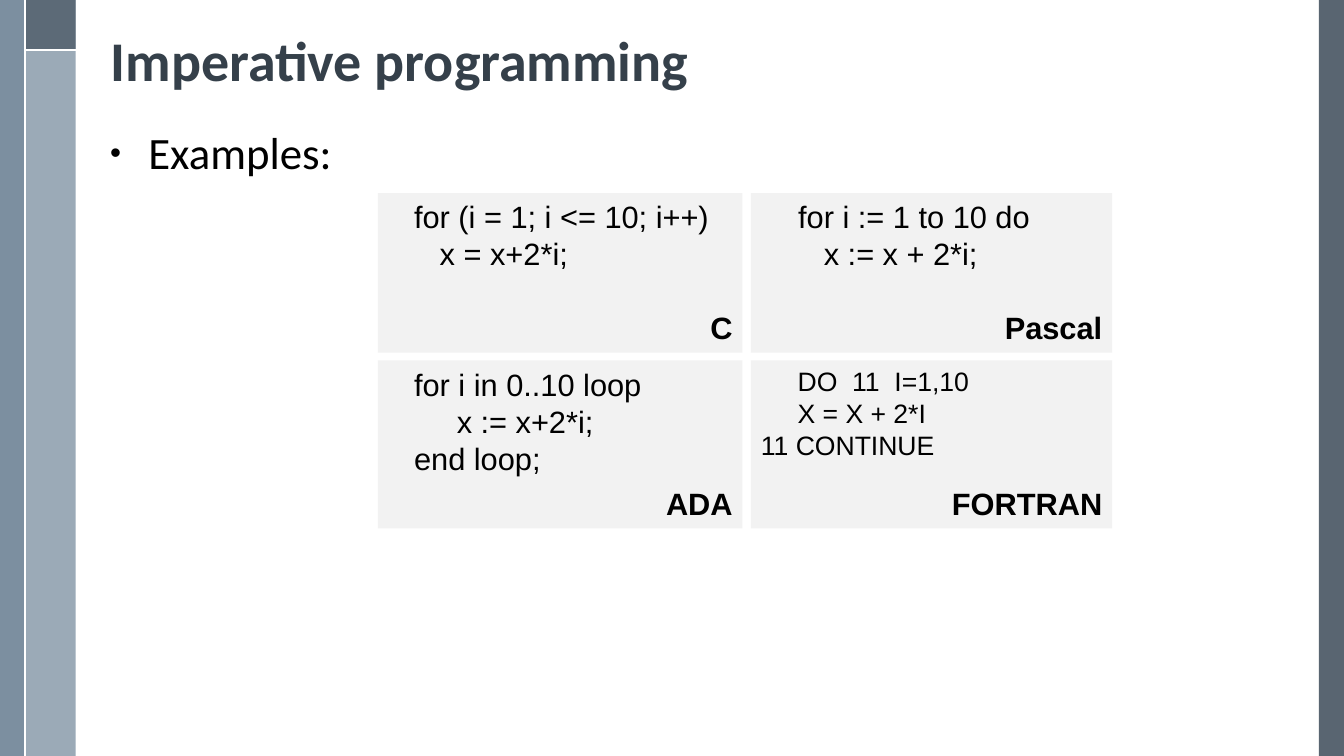
from dataclasses import dataclass

from pptx import Presentation
from pptx.dml.color import RGBColor
from pptx.enum.shapes import MSO_CONNECTOR, MSO_SHAPE
from pptx.enum.text import MSO_ANCHOR, MSO_AUTO_SIZE, PP_ALIGN
from pptx.oxml.ns import qn
from pptx.util import Inches, Pt
from lxml.etree import SubElement


@dataclass(frozen=True)
class Theme:
    slate: str = "475562"
    steel: str = "6A8093"
    mist: str = "9BAAB7"
    white: str = "FFFFFF"
    heading: str = "35404A"
    ink: str = "000000"
    panel: str = "F2F2F2"
    heading_font: str = "Calibri"
    code_font: str = "Arial"
    title_size: int = 40
    body_size: int = 32
    code_size: int = 22
    small_code_size: int = 19
    code_leading: float = 1.2


def apply(obj, values):
    for name, value in values.items():
        setattr(obj, name, value)


class SlideBuilder:
    COLUMNS, ROWS = 160, 90

    def __init__(self, prs, theme):
        self.theme = theme
        self.column = prs.slide_width / self.COLUMNS
        self.row = prs.slide_height / self.ROWS
        self.slide = prs.slides.add_slide(prs.slide_layouts[1])

    def place(self, x, y, w, h):
        return (round(x * self.column), round(y * self.row),
                round(w * self.column), round(h * self.row))

    def font(self, target, name, size, color, bold=False):
        apply(target.font, {"name": name, "size": Pt(size), "bold": bold})
        target.font.color.rgb = RGBColor.from_string(color)

    def rect(self, box, color, opacity=100):
        s = self.slide.shapes.add_shape(MSO_SHAPE.RECTANGLE, *self.place(*box))
        s.shadow.inherit = False
        s.fill.solid()
        s.fill.fore_color.rgb = RGBColor.from_string(color)
        s.line.fill.background()
        if opacity < 100:
            clr = s.element.spPr.find(qn("a:solidFill")).find(qn("a:srgbClr"))
            SubElement(clr, qn("a:alpha"), val=str(opacity * 1000))
        return s

    def rule(self, x1, y1, x2, y2):
        ends = self.place(x1, y1, x2, y2)
        line = self.slide.shapes.add_connector(MSO_CONNECTOR.STRAIGHT, *ends)
        line.line.color.rgb = RGBColor.from_string(self.theme.white)
        line.line.width = Pt(1.5)
        SubElement(line.element.spPr, qn("a:effectLst"))

    def fill_placeholder(self, index, box, text, anchor):
        sp = self.slide.placeholders[index]
        apply(sp, dict(zip(("left", "top", "width", "height"), self.place(*box))))
        tf = sp.text_frame
        tf.text = text
        apply(tf, {"auto_size": MSO_AUTO_SIZE.NONE, "word_wrap": True,
                   "vertical_anchor": anchor})
        p = tf.paragraphs[0]
        apply(p, {"alignment": PP_ALIGN.LEFT, "line_spacing": 0.9,
                  "space_before": Pt(0)})
        return p

    def title(self, box, text):
        t = self.theme
        p = self.fill_placeholder(0, box, text, MSO_ANCHOR.BOTTOM)
        self.font(p.runs[0], t.heading_font, t.title_size, t.heading, True)

    def bullet(self, box, text):
        t = self.theme
        p = self.fill_placeholder(1, box, text, MSO_ANCHOR.TOP)
        pPr = p._p.get_or_add_pPr()
        pPr.set("marL", str(Inches(0.38)))
        pPr.set("indent", str(Inches(-0.38)))
        SubElement(pPr, qn("a:buSzPct"), val="70000")
        SubElement(pPr, qn("a:buFont"), typeface=t.code_font)
        SubElement(pPr, qn("a:buChar"), char="•")
        self.font(p.runs[0], t.heading_font, t.body_size, t.ink)

    def code_card(self, box, code, language, indent, gap, size):
        t = self.theme
        tf = self.rect(box, t.panel).text_frame
        apply(tf, {"word_wrap": True, "vertical_anchor": MSO_ANCHOR.TOP})
        lines = code + [language]
        for i, text in enumerate(lines):
            label = i == len(code)
            points = t.code_size if label else size
            p = tf.paragraphs[0] if i == 0 else tf.add_paragraph()
            apply(p, {"alignment": PP_ALIGN.RIGHT if label else PP_ALIGN.LEFT,
                      "line_spacing": Pt(points * t.code_leading),
                      "space_before": Pt(gap if label else 0)})
            pPr = p._p.get_or_add_pPr()
            pPr.set("marL", str(Inches(0 if label else indent)))
            pPr.set("indent", "0")
            r = p.add_run()
            r.text = text
            self.font(r, t.code_font, points, t.ink, label)


def main():
    prs = Presentation()
    apply(prs, {"slide_width": Inches(13.33), "slide_height": Inches(7.5)})
    t = Theme()
    s = SlideBuilder(prs, t)

    for box, color, opacity in [
        ((157, 0, 3, 90), t.slate, 90),
        ((3.1, 0, 5.9, 90), t.mist, 100),
        ((0, 0, 3, 90), t.steel, 88),
        ((3, 0, 6, 6), t.slate, 75),
    ]:
        s.rect(box, color, opacity)
    s.rule(3, 6, 9, 6)
    s.rule(3, 0, 3, 90)

    s.title((12, 2.25, 143, 9.5), "Imperative programming")
    s.bullet((11.9, 15, 143, 71), "Examples:")

    columns = [(45, 43.4), (89.4, 43)]
    rows = [(23, 19), (42.9, 20)]
    blank_line = t.code_size * t.code_leading
    cards = [
        (["for (i = 1; i <= 10; i++)", "   x = x+2*i;"],
         "C", 0.26, blank_line, t.code_size),
        (["for i := 1 to 10 do", "   x := x + 2*i;"],
         "Pascal", 0.37, blank_line, t.code_size),
        (["for i in 0..10 loop", "     x := x+2*i;", "end loop;"],
         "ADA", 0.26, 6, t.code_size),
        (["     DO  11  I=1,10", "     X = X + 2*I", "11 CONTINUE"],
         "FORTRAN", 0, 17, t.small_code_size),
    ]
    for i, card in enumerate(cards):
        (x, w), (y, h) = columns[i % 2], rows[i // 2]
        s.code_card((x, y, w, h), *card)

    prs.save("out.pptx")


if __name__ == "__main__":
    main()
